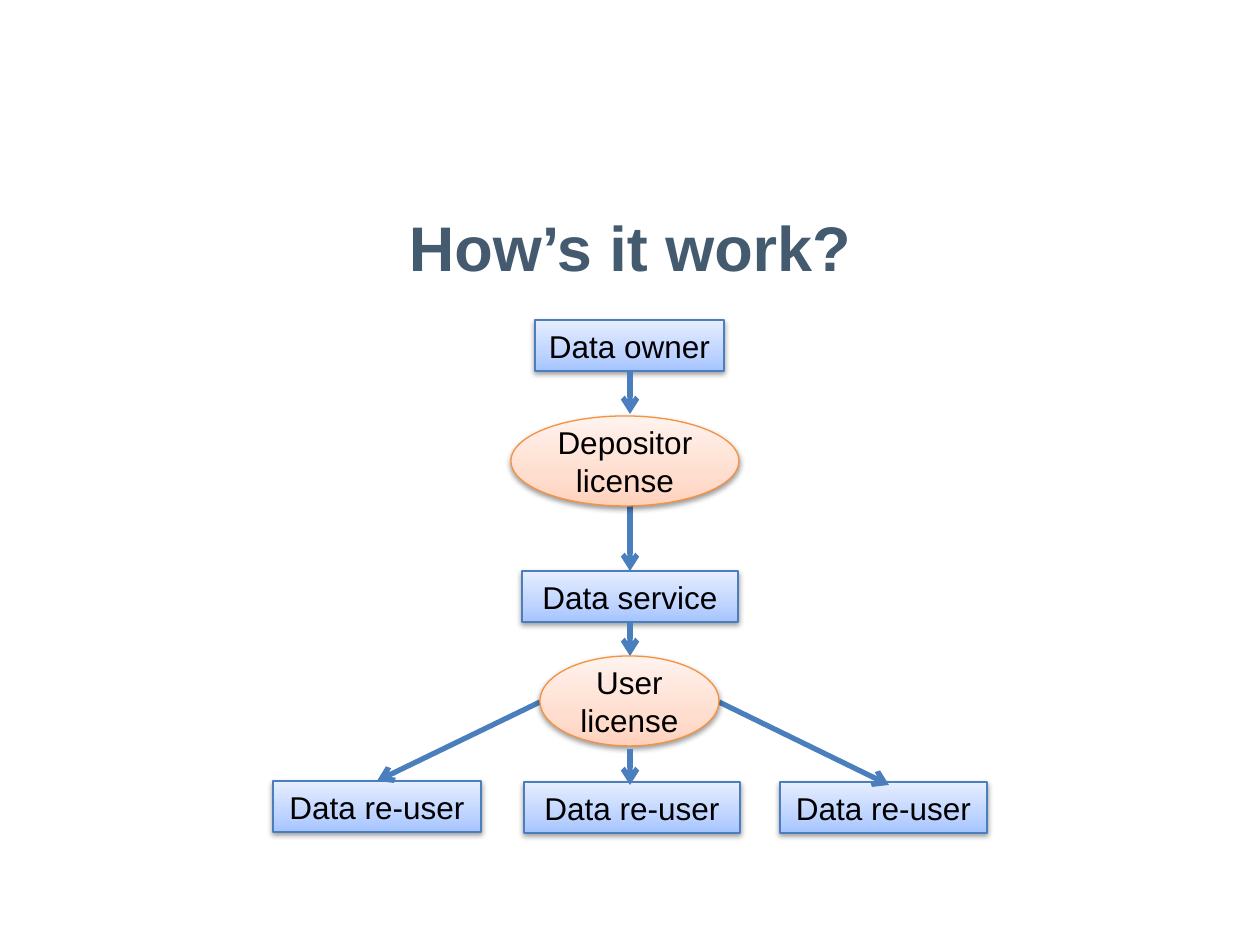
from lxml.etree import SubElement
from pptx import Presentation
from pptx.dml.color import RGBColor
from pptx.enum.shapes import MSO_CONNECTOR, MSO_SHAPE
from pptx.enum.text import MSO_ANCHOR, PP_ALIGN
from pptx.oxml.ns import qn
from pptx.util import Emu, Pt

SCALE = 914400 / 126  # EMU in one px
FONT = "Arial"
SLATE = RGBColor(0x44, 0x5A, 0x6F)
BLACK = RGBColor(0, 0, 0)
BLUE = RGBColor(0x4B, 0x7E, 0xBC)
ORANGE = RGBColor(0xF6, 0x92, 0x40)
# Gradient colours, from the bottom up
BLUES = (RGBColor(0xA4, 0xC4, 0xFF), RGBColor(0xBF, 0xD4, 0xFF),
         RGBColor(0xE6, 0xEE, 0xFF))
PEACHES = (RGBColor(0xFF, 0xD2, 0xBD), RGBColor(0xFF, 0xDE, 0xD0),
           RGBColor(0xFF, 0xF2, 0xED))
STOPS = (0, 35, 100)


def px(n):
    return Emu(round(n * SCALE))


def add_text(frame, lines, size, color, bold=False):
    frame.vertical_anchor = MSO_ANCHOR.MIDDLE
    for i, line in enumerate(lines):
        para = frame.paragraphs[0] if i == 0 else frame.add_paragraph()
        para.alignment = PP_ALIGN.CENTER
        run = para.add_run()
        run.text = line
        font = run.font
        font.name, font.size, font.bold = FONT, Pt(size), bold
        font.color.rgb = color


def add_title(slide, text):
    title = slide.shapes.title
    title.left, title.top = px(63), px(168)
    title.width, title.height = px(1134), px(157)
    add_text(title.text_frame, [text], 36, SLATE, True)


def add_shade(shape, colors):
    shape.fill.gradient()
    shape.fill.gradient_angle = 90
    stops = shape._element.spPr.find(".//" + qn("a:gsLst"))
    for old in list(stops):
        stops.remove(old)
    for pos, color in zip(STOPS, colors):
        stop = SubElement(stops, qn("a:gs"), pos=str(pos * 1000))
        SubElement(stop, qn("a:srgbClr"), val=str(color))


def add_shadow(shape):
    shape.shadow.inherit = False
    effects = shape._element.spPr.find(qn("a:effectLst"))
    outer = SubElement(effects, qn("a:outerShdw"), blurRad="40000",
                       dist="20000", dir="5400000", rotWithShape="0")
    color = SubElement(outer, qn("a:srgbClr"), val=str(BLACK))
    SubElement(color, qn("a:alpha"), val="38000")


def add_node(slide, kind, box, lines, colors, edge, wrap):
    shape = slide.shapes.add_shape(kind, *map(px, box))
    add_shade(shape, colors)
    shape.line.color.rgb = edge
    shape.line.width = Pt(0.75)
    add_shadow(shape)
    shape.text_frame.word_wrap = wrap
    add_text(shape.text_frame, lines, 18, BLACK)


def add_party(slide, left, top, width, text):
    add_node(slide, MSO_SHAPE.RECTANGLE, (left, top, width, 51),
             [text], BLUES, BLUE, False)


def add_license(slide, left, top, width, lines):
    add_node(slide, MSO_SHAPE.OVAL, (left, top, width, 90),
             lines, PEACHES, ORANGE, True)


def add_arrow(slide, *ends):
    arrow = slide.shapes.add_connector(MSO_CONNECTOR.STRAIGHT, *map(px, ends))
    arrow.line.color.rgb = BLUE
    arrow.line.width = Pt(3)
    SubElement(arrow.line._get_or_add_ln(), qn("a:tailEnd"), type="arrow")
    SubElement(arrow._element.spPr, qn("a:effectLst"))


def main():
    deck = Presentation()
    deck.slide_width, deck.slide_height = px(1260), px(945)
    slide = deck.slides.add_slide(deck.slide_layouts[5])
    add_title(slide, "How’s it work?")

    # Parties
    add_party(slide, 535, 320, 189, "Data owner")
    add_party(slide, 522, 571, 216, "Data service")
    for left, top, width in ((273, 781, 208), (524, 782, 216), (780, 782, 207)):
        add_party(slide, left, top, width, "Data re-user")

    # Arrows that start behind the licenses
    add_arrow(slide, 630, 505, 630, 571)
    add_arrow(slide, 540, 702, 377, 781)
    add_arrow(slide, 719, 702, 889, 785)
    add_arrow(slide, 630, 621, 630, 656)

    # Licenses
    add_license(slide, 511, 416, 228, ["Depositor", "license"])
    add_license(slide, 540, 656, 179, ["User license"])

    # Arrows in front
    add_arrow(slide, 630, 370, 630, 414)
    add_arrow(slide, 630, 749, 630, 785)

    deck.save("out.pptx")


if __name__ == "__main__":
    main()
